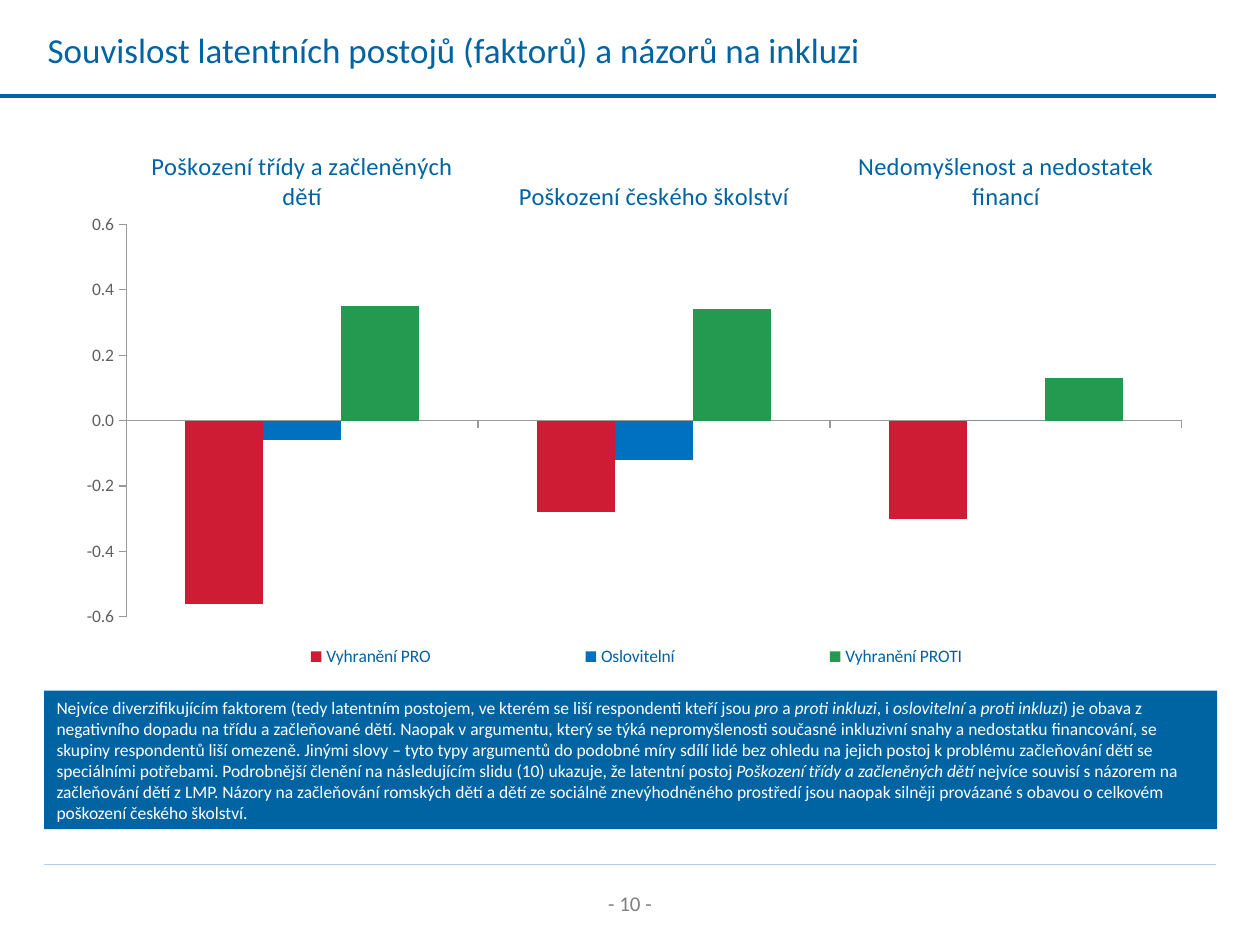
from dataclasses import dataclass

from lxml import etree
from pptx import Presentation
from pptx.chart.data import CategoryChartData
from pptx.dml.color import RGBColor
from pptx.enum.chart import XL_CHART_TYPE, XL_LEGEND_POSITION, XL_TICK_LABEL_POSITION, XL_TICK_MARK
from pptx.enum.shapes import MSO_CONNECTOR, MSO_SHAPE
from pptx.enum.text import MSO_ANCHOR, PP_ALIGN
from pptx.oxml.ns import qn
from pptx.util import Inches, Pt

WIDTH, HEIGHT = Inches(10), Inches(7.5)
FONT = "Calibri"
BLUE, WHITE, GRAY, AXIS = "0063A2", "FFFFFF", "808080", "999999"
LEFT, RIGHT = 3.5, 96.5


@dataclass(frozen=True)
class Box:
    """A frame in percent of the slide's width and height."""
    x: float
    y: float
    w: float
    h: float

    def emu(self) -> tuple[int, int, int, int]:
        return (across(self.x), down(self.y), across(self.w), down(self.h))


@dataclass(frozen=True)
class Series:
    name: str
    values: tuple[float, ...]
    color: str


@dataclass(frozen=True)
class Rule:
    start: float
    y: float
    color: str
    weight: float


TITLE = Box(2.8, 0, 89.2, 10.53)
CHART = Box(LEFT, 15.33, 93.1, 56.13)
COMMENT = Box(LEFT, 73.07, 93.1, 14.67)
PAGE = Box(43.7, 93.6, 12.6, 4)
RULES = (Rule(LEFT, 91.47, "AFCFEA", 0.5), Rule(0, 10.13, BLUE, 2.25))

FACTORS = ("Poškození třídy a začleněných dětí", "Poškození českého školství",
           "Nedomyšlenost a nedostatek financí")
GROUPS = (
    Series("Vyhranění PRO", (-0.56, -0.28, -0.3), "CE1C34"),
    Series("Oslovitelní", (-0.06, -0.12, 0), "0070C0"),
    Series("Vyhranění PROTI", (0.35, 0.34, 0.13), "249A50"),
)
# Plain and italic parts take turns.
COMMENT_PARTS = (
    "Nejvíce diverzifikujícím faktorem (tedy latentním postojem, ve kterém se liší respondenti "
    "kteří jsou ",
    "pro", " a ", "proti inkluzi", ", i ", "oslovitelní", " a ", "proti inkluzi",
    ") je obava z negativního dopadu na třídu a začleňované dětí. Naopak v argumentu, který se "
    "týká nepromyšlenosti současné inkluzivní snahy a nedostatku financování, se skupiny "
    "respondentů liší omezeně. Jinými slovy – tyto typy argumentů do podobné míry sdílí lidé bez "
    "ohledu na jejich postoj k problému začleňování dětí se speciálními potřebami. Podrobnější "
    "členění na následujícím slidu (10) ukazuje, že latentní postoj ",
    "Poškození třídy a začleněných dětí ",
    "nejvíce souvisí s názorem na začleňování dětí z LMP. Názory na začleňování romských dětí "
    "a dětí ze sociálně znevýhodněného prostředí jsou naopak silněji provázané s obavou "
    "o celkovém poškození českého školství.",
)


def across(percent: float) -> int:
    return round(WIDTH * percent / 100)


def down(percent: float) -> int:
    return round(HEIGHT * percent / 100)


def rgb(value: str) -> RGBColor:
    return RGBColor.from_string(value)


def style_font(font, size: float, color: str) -> None:
    font.name, font.size = FONT, Pt(size)
    font.color.rgb = rgb(color)


def write(sp, *parts: str, size: float, color: str, align=PP_ALIGN.LEFT,
          anchor=MSO_ANCHOR.MIDDLE) -> None:
    """Fill a shape with one paragraph; every second part is italic."""
    tf = sp.text_frame
    tf.word_wrap = True
    tf.vertical_anchor = anchor
    p = tf.paragraphs[0]
    p.alignment = align
    for i, part in enumerate(parts):
        r = p.add_run()
        r.text = part
        style_font(r.font, size, color)
        r.font.italic = i % 2 == 1


def draw_rule(slide, rule: Rule) -> None:
    y = down(rule.y)
    line = slide.shapes.add_connector(MSO_CONNECTOR.STRAIGHT, across(rule.start), y, across(RIGHT), y)
    line.line.color.rgb = rgb(rule.color)
    line.line.width = Pt(rule.weight)
    etree.SubElement(line._element.spPr, qn("a:effectLst"))


def set_layout(parent, before: tuple[str, ...], frame: tuple[float, ...], inner: bool = False) -> None:
    """Place a chart part by shares of the chart, just after its last `before` child."""
    for old in parent.findall(qn("c:layout")):
        parent.remove(old)
    layout = etree.Element(qn("c:layout"))
    manual = etree.SubElement(layout, qn("c:manualLayout"))
    settings = [("layoutTarget", "inner")] if inner else []
    settings += [("xMode", "edge"), ("yMode", "edge"), *zip("xywh", frame)]
    for tag, value in settings:
        etree.SubElement(manual, qn(f"c:{tag}")).set("val", str(value))
    tags = [qn(tag) for tag in before]
    parent.insert(sum(child.tag in tags for child in parent), layout)


def draw_chart(slide) -> None:
    data = CategoryChartData(number_format="0.00")
    data.categories = FACTORS
    for group in GROUPS:
        data.add_series(group.name, group.values)
    chart = slide.shapes.add_chart(XL_CHART_TYPE.COLUMN_CLUSTERED, *CHART.emu(), data).chart
    chart.has_title = False
    style_font(chart.font, 10, "5F5F5F")

    plot = chart.plots[0]
    plot.gap_width, plot.overlap, plot.vary_by_categories = 150, 0, False
    for series, group in zip(plot.series, GROUPS):
        series.invert_if_negative = False
        series.format.fill.solid()
        series.format.fill.fore_color.rgb = rgb(group.color)

    for axis in (chart.category_axis, chart.value_axis):
        axis.has_major_gridlines = False
        axis.major_tick_mark = XL_TICK_MARK.OUTSIDE
        axis.format.line.color.rgb = rgb(AXIS)
        axis.format.line.width = Pt(0.75)
    style_font(chart.category_axis.tick_labels.font, 14, BLUE)
    chart.category_axis.tick_label_position = XL_TICK_LABEL_POSITION.HIGH
    value = chart.value_axis
    value.minimum_scale, value.maximum_scale, value.major_unit = -0.6, 0.6, 0.2
    value.tick_labels.number_format = "#,##0.0"
    value.tick_labels.number_format_is_linked = False

    chart.has_legend = True
    legend = chart.legend
    legend.position = XL_LEGEND_POSITION.RIGHT
    legend.include_in_layout = False
    style_font(legend.font, 10, BLUE)
    set_layout(legend._element, ("c:legendPos", "c:legendEntry"), (0.1, 0.93, 0.81, 0.07))
    set_layout(chart._chartSpace.chart.plotArea, (), (0.07, 0.15, 0.9, 0.74), inner=True)


def draw_comment(slide) -> None:
    sp = slide.shapes.add_shape(MSO_SHAPE.RECTANGLE, *COMMENT.emu())
    sp.shadow.inherit = False
    sp.fill.solid()
    sp.fill.fore_color.rgb = rgb(BLUE)
    sp.line.fill.background()
    write(sp, *COMMENT_PARTS, size=10, color=WHITE)


def main() -> None:
    prs = Presentation()
    prs.slide_width, prs.slide_height = WIDTH, HEIGHT
    slide = prs.slides.add_slide(prs.slide_layouts[6])
    for rule in RULES:
        draw_rule(slide, rule)
    write(slide.shapes.add_textbox(*PAGE.emu()), "- 10 -", size=12, color=GRAY,
          align=PP_ALIGN.CENTER, anchor=MSO_ANCHOR.TOP)
    write(slide.shapes.add_textbox(*TITLE.emu()),
          "Souvislost latentních postojů (faktorů) a názorů na inkluzi", size=20, color=BLUE)
    draw_chart(slide)
    draw_comment(slide)
    prs.save("out.pptx")


if __name__ == "__main__":
    main()
